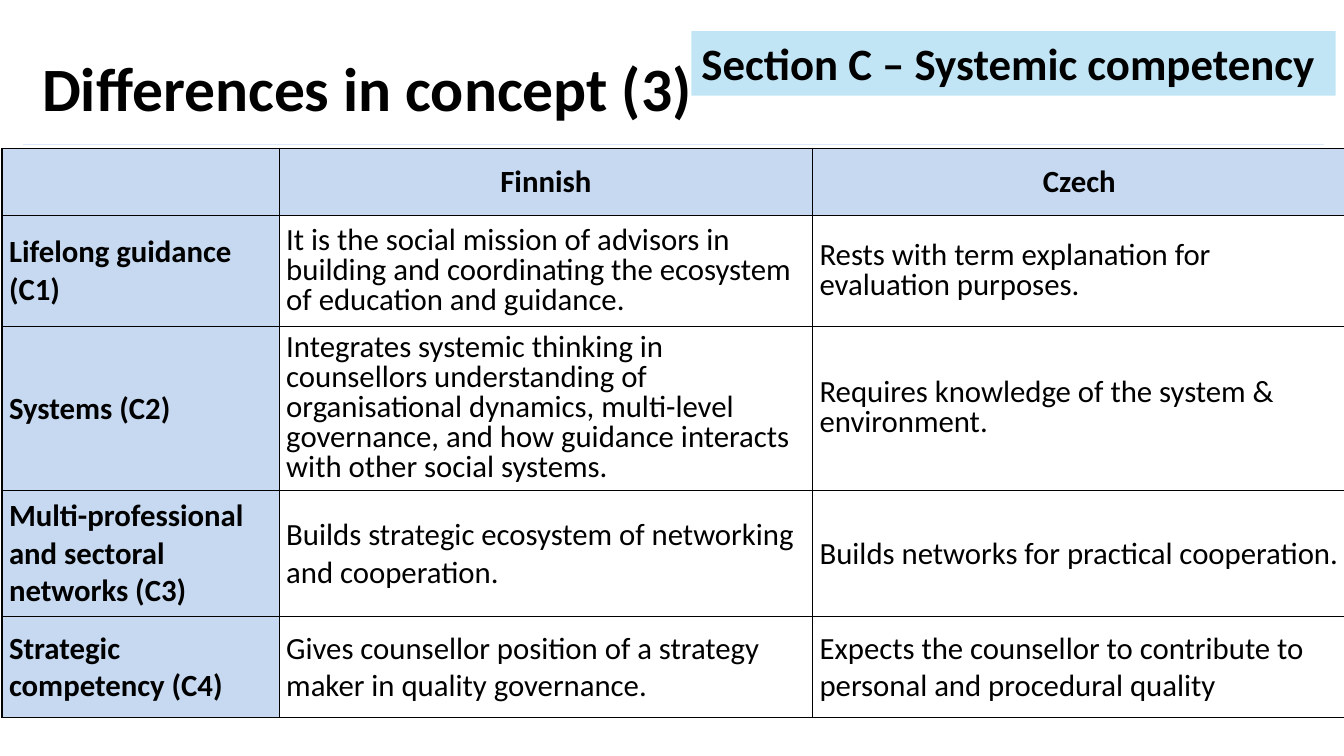
from lxml.etree import SubElement
from pptx import Presentation
from pptx.dml.color import RGBColor
from pptx.enum.shapes import MSO_CONNECTOR as Connector, MSO_SHAPE as Shape
from pptx.enum.text import MSO_ANCHOR as Anchor, PP_ALIGN as Align
from pptx.oxml import parse_xml
from pptx.oxml.ns import nsdecls, qn
from pptx.util import Pt

COLORS = {
    "text": "000000",
    "border": "000000",
    "rule": "DCEAF7",
    "header": "C6D9F1",
    "section": "C1E5F5",
    "body": "FFFFFF",
}
COLUMN_WIDTHS = [198, 381, 381]
ROW_HEIGHTS = [48.24, 79.2, 117.36, 90, 72]
TIGHT_ROWS = (1, 2)
COMPARISON = [
    ["", "Finnish", "Czech"],
    [
        "Lifelong guidance (C1)",
        "It is the social mission of advisors in building and coordinating "
        "the ecosystem of education and guidance.",
        "Rests with term explanation for evaluation purposes.",
    ],
    [
        "Systems (C2)",
        "Integrates systemic thinking in counsellors understanding of "
        "organisational dynamics, multi-level governance, and how guidance "
        "interacts with other social systems.",
        "Requires knowledge of the system & environment.",
    ],
    [
        "Multi-professional and sectoral networks (C3)",
        "Builds strategic ecosystem of networking and cooperation.",
        "Builds networks for practical cooperation.",
    ],
    [
        "Strategic competency (C4)",
        "Gives counsellor position of a strategy maker in quality governance.",
        "Expects the counsellor to contribute to personal and procedural quality",
    ],
]


def rgb(name):
    return RGBColor.from_string(COLORS[name])


class SlideBuilder:
    def __init__(self, page, font="Calibri"):
        self.page = page
        self.font = font

    def set_text(self, frame, text, size, bold=True, align=Align.LEFT, spacing=None):
        frame.text = text
        frame.word_wrap = True
        para = frame.paragraphs[0]
        para.alignment = align
        if spacing:
            para.line_spacing = spacing
        para.font.size = Pt(size)
        for span in para.runs:
            span.font.name = self.font
            span.font.size = Pt(size)
            span.font.bold = bold
            span.font.color.rgb = rgb("text")

    def rule(self, left, right, y):
        line = self.page.shapes.add_connector(
            Connector.STRAIGHT, Pt(left), Pt(y), Pt(right), Pt(y))
        line.line.color.rgb = rgb("rule")
        line.line.width = Pt(0.5)
        SubElement(line._element.spPr, qn("a:effectLst"))

    def title(self, text, left, top, width, height):
        box = self.page.shapes.add_textbox(Pt(left), Pt(top), Pt(width), Pt(height))
        box.text_frame.vertical_anchor = Anchor.MIDDLE
        self.set_text(box.text_frame, text, 44, spacing=0.9)

    def section_label(self, text, left, top, width, height):
        box = self.page.shapes.add_shape(
            Shape.RECTANGLE, Pt(left), Pt(top), Pt(width), Pt(height))
        box.shadow.inherit = False
        box.fill.solid()
        box.fill.fore_color.rgb = rgb("section")
        box.line.fill.background()
        box.text_frame.vertical_anchor = Anchor.TOP
        self.set_text(box.text_frame, text, 32)

    def border(self, cell):
        properties = cell._tc.get_or_add_tcPr()
        for index, side in enumerate(("lnL", "lnR", "lnT", "lnB")):
            properties.insert(index, parse_xml(
                f'<a:{side} {nsdecls("a")} w="{Pt(1)}"><a:solidFill>'
                f'<a:srgbClr val="{COLORS["border"]}"/></a:solidFill></a:{side}>'))

    def table(self, rows, left, top, widths, heights):
        table = self.page.shapes.add_table(
            len(rows), len(widths), Pt(left), Pt(top),
            Pt(sum(widths)), Pt(sum(heights))).table
        table.first_row = table.horz_banding = False
        for column, width in zip(table.columns, widths):
            column.width = Pt(width)
        for row, height in zip(table.rows, heights):
            row.height = Pt(height)
        for r, texts in enumerate(rows):
            for c, text in enumerate(texts):
                cell = table.cell(r, c)
                is_header = r == 0 or c == 0
                cell.fill.solid()
                cell.fill.fore_color.rgb = rgb("header" if is_header else "body")
                cell.vertical_anchor = Anchor.MIDDLE
                cell.margin_left = cell.margin_right = Pt(5.04)
                cell.margin_top = cell.margin_bottom = Pt(0)
                self.border(cell)
                self.set_text(
                    cell.text_frame, text, 22, bold=is_header,
                    align=Align.CENTER if r == 0 else Align.LEFT,
                    spacing=0.8 if r in TIGHT_ROWS and not is_header else None)


def main():
    deck = Presentation()
    deck.slide_width, deck.slide_height = Pt(960), Pt(540)
    builder = SlideBuilder(deck.slides.add_slide(deck.slide_layouts[6]))
    builder.rule(16.56, 946.08, 102.96)
    builder.table(COMPARISON, 1.44, 105.84, COLUMN_WIDTHS, ROW_HEIGHTS)
    builder.title("Differences in concept (3)", 23.04, 28.8, 937.44, 73.44)
    builder.section_label("Section C – Systemic competency", 493.92, 22.32, 460.08, 46.08)
    deck.save("out.pptx")


if __name__ == "__main__":
    main()
